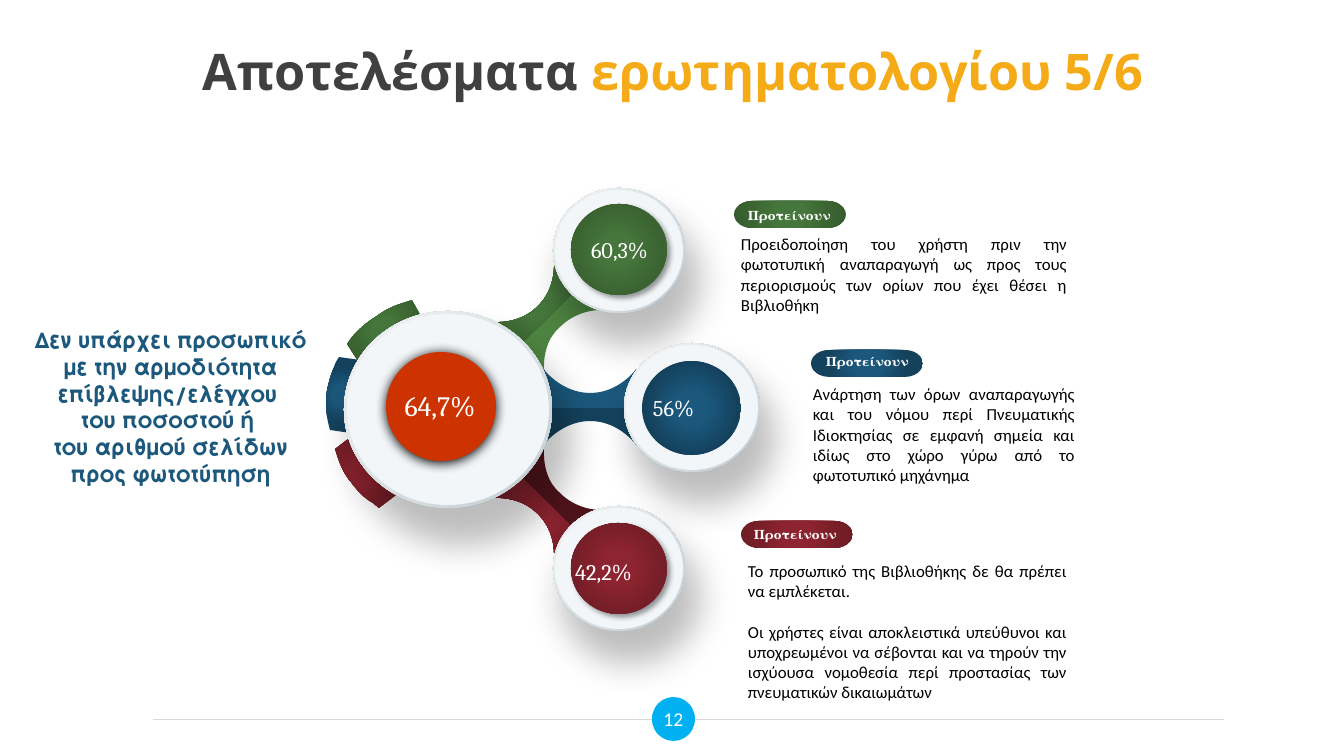
from pptx import Presentation
from pptx.dml.color import RGBColor
from pptx.enum.shapes import MSO_CONNECTOR as Connector, MSO_SHAPE as Shape
from pptx.enum.text import MSO_ANCHOR as Anchor, MSO_AUTO_SIZE as AutoSize, PP_ALIGN as Align
from pptx.oxml import parse_xml
from pptx.oxml.ns import nsdecls, qn
from pptx.util import Pt

PX = 12192000 / 1344
CENTRE = (50, 50, 50, 50)
CORNER = (0, 0, 100, 100)


def dress(shape, fill, shadow=None):
    shape.shadow.inherit = False
    shape.line.fill.background()
    shape.fill.solid()
    props = shape._element.spPr
    if isinstance(fill, str):
        shape.fill.fore_color.rgb = RGBColor.from_string(fill)
    else:
        stops, focus = fill
        marks = "".join(f'<a:gs pos="{at * 1000}"><a:srgbClr val="{tone}"/></a:gs>' for at, tone in stops)
        edges = " ".join(f'{side}="{share * 1000}"' for side, share in zip("ltrb", focus))
        solid = props.find(qn("a:solidFill"))
        props.replace(solid, parse_xml(
            f'<a:gradFill {nsdecls("a")} rotWithShape="1"><a:gsLst>{marks}</a:gsLst>'
            f'<a:path path="circle"><a:fillToRect {edges}/></a:path></a:gradFill>'))
    if shadow:
        alpha, blur, distance, angle, zoom = shadow
        props.find(qn("a:effectLst")).append(parse_xml(
            f'<a:outerShdw {nsdecls("a")} blurRad="{int(blur * 12700)}" dist="{distance * 12700}" '
            f'dir="{angle * 60000}" sx="{zoom * 1000}" sy="{zoom * 1000}" algn="tl" rotWithShape="0">'
            f'<a:srgbClr val="000000"><a:alpha val="{alpha * 1000}"/></a:srgbClr></a:outerShdw>'))


def write(box, paragraphs, style, align=Align.CENTER, insets=(10, 5, 10, 5), gap=0):
    frame = box.text_frame
    frame.word_wrap = True
    for side, inset in zip(("left", "top", "right", "bottom"), insets):
        setattr(frame, f"margin_{side}", int(inset * PX))
    for number, pieces in enumerate(paragraphs):
        para = frame.paragraphs[0] if number == 0 else frame.add_paragraph()
        para.alignment = align
        if number and gap:
            para.space_before = Pt(gap)
        for text, color in pieces:
            span = para.add_run()
            span.text = text
            for name, value in THEME[style].items():
                setattr(span.font, name, value)
            span.font.color.rgb = RGBColor.from_string(color)


THEME = {
    "title": {"name": "Open Sans", "size": Pt(36), "bold": True},
    "claim": {"name": "TeX Gyre Adventor", "size": Pt(16), "bold": True},
    "pill": {"name": "TeX Gyre Schola", "size": Pt(9), "bold": True},
    "body": {"name": "Calibri", "size": Pt(12)},
    "share": {"name": "Cambria", "size": Pt(16)},
    "main share": {"name": "Cambria", "size": Pt(20)},
    "number": {"name": "Calibri", "size": Pt(14)},
    "white": "FFFFFF", "black": "000000", "grey": "404040", "amber": "F4AB17",
    "navy": "1B587C", "dark navy": "14425D", "dark red": "50141B", "light green": "4E8542",
    "face": "F2F6F9", "orange": "CC3300", "rule": "D9D9D9", "badge": "00B0F0",
    "rim": (((0, "F4F4F4"), (61, "D5DDE0"), (83, "CBD4D9"), (100, "9DA6A9")), CORNER),
    "red glow": (((0, "8E2430"), (23, "8E2430"), (69, "771F28"), (97, "6F1D26")), CENTRE),
    "blue glow": (((0, "1B587C"), (23, "1B587C"), (69, "14425D"), (97, "14425D")), CENTRE),
    "green glow": (((0, "45763B"), (23, "45763B"), (69, "3B6432"), (97, "375D2E")), CENTRE),
    "rim shadow": (25, 25, 19, 74, 106), "disc shadow": (40, 4, 3, 45, 100),
    "core shadow": (100, 8.5, 1, 90, 100),
}

deck = Presentation()
deck.slide_width, deck.slide_height = int(1344 * PX), int(756 * PX)
page = deck.slides.add_slide(deck.slide_layouts[6])
shapes = page.shapes

red_arc = [(351, 482), (344, 474, 340, 464, 337, 455), (335, 449), (352, 436), (352, 439),
           (355, 451, 359, 461, 366, 470), (373, 480, 382, 487, 391, 492), (396, 495),
           (379, 508), (373, 503), (364, 498, 357, 490, 351, 482)]
blue_arc = [(327, 391), (329, 381, 332, 371, 336, 362), (339, 357), (360, 360), (358, 363),
            (352, 372, 348, 383, 347, 394), (345, 406, 346, 417, 349, 427), (351, 433),
            (330, 430), (328, 422), (326, 412, 326, 402, 327, 391)]
green_arc = [(377, 316), (386, 309, 396, 305, 406, 302), (412, 300), (422, 318), (419, 318),
             (408, 321, 397, 325, 387, 332), (377, 338, 368, 346, 362, 356), (358, 361),
             (347, 344), (352, 337), (359, 329, 367, 322, 377, 316)]
outer_arm = [(516, 349), (582, 284), (554, 256), (554, 260), (555, 278, 550, 294, 538, 306),
             (526, 318, 510, 323, 492, 322), (489, 322)]
inner_arm = [(517, 348), (583, 283), (610, 310), (606, 310), (589, 309, 572, 315, 560, 327),
             (548, 337, 543, 354, 544, 372), (544, 376)]
waist = [(544, 408), (636, 408), (636, 369), (634, 372), (622, 385, 607, 393, 590, 393),
         (574, 393, 558, 385, 546, 372), (544, 369)]
low_outer_arm, low_inner_arm, low_waist = (
    [tuple(total - value if place % 2 else value for place, value in enumerate(step)) for step in outline]
    for outline, total in ((outer_arm, 820), (inner_arm, 820), (waist, 814)))

for outline, fill in (
    (red_arc, "red glow"), (low_outer_arm, "red glow"), (low_inner_arm, "dark red"),
    (blue_arc, "blue glow"), (low_waist, "dark navy"), (waist, "navy"),
    (green_arc, "green glow"), (inner_arm, "light green"), (outer_arm, "green glow"),
):
    corners = [(step[-2] * PX, step[-1] * PX) for step in outline]
    builder = shapes.build_freeform(*corners[0])
    builder.add_line_segments(corners[1:], close=False)
    link = builder.convert_to_shape()
    sides = list(link._element.iter(qn("a:lnTo")))
    for side, step in zip(sides, outline[1:]):
        if len(step) == 6:
            knots = "".join(f'<a:pt x="{round(x * PX) - link.left}" y="{round(y * PX) - link.top}"/>'
                            for x, y in zip(step[::2], step[1::2]))
            side.getparent().replace(side, parse_xml(f'<a:cubicBezTo {nsdecls("a")}>{knots}</a:cubicBezTo>'))
    next(link._element.iter(qn("a:moveTo"))).getparent().append(parse_xml(f'<a:close {nsdecls("a")}/>'))
    dress(link, THEME[fill])

ellipses = []
for (x, y, w, h), inset, discs in (
    ((344, 311, 208, 197), 3, [((386, 352, 110, 109), "orange", "core shadow")]),
    ((553, 188, 132, 125), 2, [((571, 204, 96, 91), "green glow", "disc shadow"),
                               ((571, 206, 93, 88), "green glow", None)]),
    ((624, 343, 136, 129), 2, [((642, 361, 99, 94), "blue glow", None)]),
    ((553, 506, 132, 125), 2, [((571, 523, 96, 91), "red glow", "disc shadow"),
                               ((571, 523, 93, 88), "red glow", None)]),
):
    face = (x + inset, y + inset, w - 2 * inset, h - 2 * inset)
    ellipses += [((x, y, w, h), "rim", "rim shadow"), (face, "face", None), *discs]
for place, fill, shadow in ellipses:
    disc = shapes.add_shape(Shape.OVAL, *(int(v * PX) for v in place))
    dress(disc, THEME[fill], THEME.get(shadow))

for x, y, fill in ((734, 201, "green glow"), (811, 350, "blue glow"), (741, 521, "red glow")):
    pill = shapes.add_shape(Shape.FLOWCHART_TERMINATOR, *(int(v * PX) for v in (x, y, 112, 27)))
    dress(pill, THEME[fill])

white, black, navy = THEME["white"], THEME["black"], THEME["navy"]
tight = {"insets": (5, 2, 5, 2)}
justified = {"align": Align.JUSTIFY}
label = [[("Προτείνουν", white)]]
for place, paragraphs, style, options in (
    ((167, 35, 1012, 72), [[("Αποτελέσματα ", THEME["grey"]), ("ερωτηματολογίου 5/6", THEME["amber"])]],
     "title", {}),
    ((19, 321, 303, 173), [[("Δεν υπάρχει προσωπικό με την αρμοδιότητα επίβλεψης/ελέγχου ", navy)],
                           [("του ποσοστού ή ", navy)],
                           [("του αριθμού σελίδων προς φωτοτύπηση", navy)]], "claim", {}),
    ((397, 387, 86, 38), [[("64,7%", white)]], "main share", tight),
    ((581, 234, 77, 32), [[("60,3%", white)]], "share", tight),
    ((637, 392, 73, 32), [[("56%", white)]], "share", tight),
    ((567, 556, 73, 32), [[("42,2%", white)]], "share", tight),
    ((738, 203, 105, 25), label, "pill", {"align": Align.LEFT}),
    ((816, 349, 105, 25), label, "pill", {"align": Align.LEFT}),
    ((744, 522, 105, 25), label, "pill", {"align": Align.LEFT}),
    ((731, 229, 346, 92), [[("Προειδοποίηση του χρήστη πριν την φωτοτυπική αναπαραγωγή ως προς τους "
                             "περιορισμούς των ορίων που έχει θέσει η Βιβλιοθήκη", black)]], "body", justified),
    ((803, 379, 282, 112), [[("Ανάρτηση των όρων αναπαραγωγής και του νόμου περί Πνευματικής Ιδιοκτησίας "
                              "σε εμφανή σημεία και ιδίως στο χώρο γύρω από το φωτοτυπικό μηχάνημα", black)]],
     "body", justified),
    ((738, 556, 339, 152), [[("Το προσωπικό της Βιβλιοθήκης δε θα πρέπει να εμπλέκεται.", black)],
                            [("Οι χρήστες είναι αποκλειστικά υπεύθυνοι και υποχρεωμένοι να σέβονται και να "
                              "τηρούν την ισχύουσα νομοθεσία περί προστασίας των πνευματικών δικαιωμάτων",
                              black)]], "body", {"align": Align.JUSTIFY, "gap": 14.6}),
):
    box = shapes.add_textbox(*(int(v * PX) for v in place))
    write(box, paragraphs, style, **options)
    box.text_frame.auto_size = AutoSize.SHAPE_TO_FIT_TEXT

rule = shapes.add_connector(Connector.STRAIGHT, *(int(v * PX) for v in (153, 719, 1224, 719)))
rule.line.color.rgb = RGBColor.from_string(THEME["rule"])
rule.line.width = Pt(0.5)
rule._element.spPr.append(parse_xml(f'<a:effectLst {nsdecls("a")}/>'))

badge = shapes.add_shape(Shape.OVAL, *(int(v * PX) for v in (652, 697, 43, 44)))
dress(badge, THEME["badge"])
write(badge, [[("12", white)]], "number", insets=(0, 5, 0, 5))
badge.text_frame.vertical_anchor = Anchor.MIDDLE

deck.save("out.pptx")
